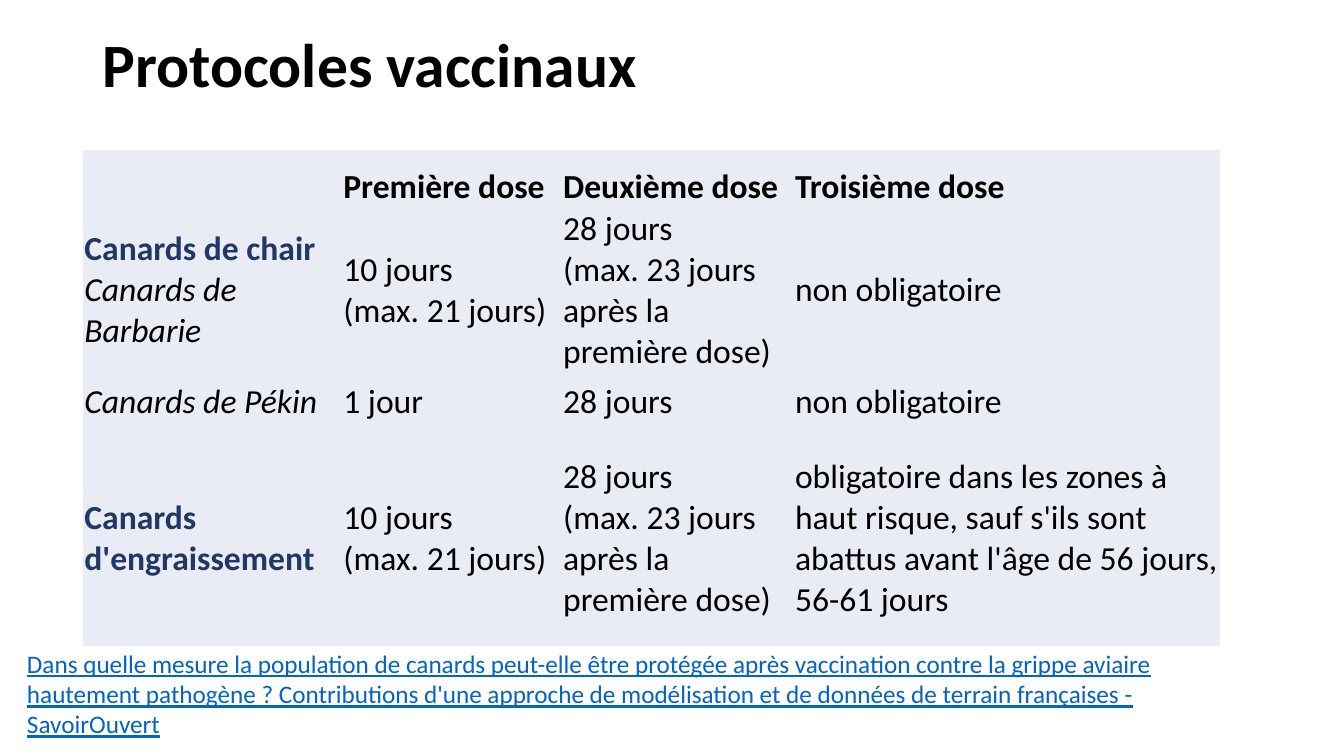
from pptx import Presentation
from pptx.dml.color import RGBColor
from pptx.enum.text import MSO_ANCHOR as Anchor, MSO_AUTO_SIZE as AutoSize, PP_ALIGN as Align
from pptx.oxml.ns import qn
from pptx.util import Pt

BLACK = RGBColor(0x00, 0x00, 0x00)
NAVY = RGBColor(0x20, 0x38, 0x64)
LINK_BLUE = RGBColor(0x05, 0x63, 0xC1)
PALE_BLUE = RGBColor(0xE9, 0xEB, 0xF5)
NO_STYLE_NO_GRID = "{2D5ABB26-0587-4C30-8999-92F81FD0307C}"

HEADING = dict(bold=True)
GROUP = dict(bold=True, color=NAVY)
BREED = dict(italic=True)
PLAIN = {}

# Each cell is a list of paragraphs; each paragraph is a list of (text, format).
FIRST_DOSE = [[("10 jours", PLAIN)], [("(max. 21 jours)", PLAIN)]]
SECOND_DOSE = [[("28 jours", PLAIN)], [("(max. 23 jours après la première dose)", PLAIN)]]
OPTIONAL = [[("non obligatoire", PLAIN)]]
PROTOCOLS = [
    [[]] + [[[(f"{rank} dose", HEADING)]] for rank in ("Première", "Deuxième", "Troisième")],
    [[[("Canards de chair ", GROUP), ("Canards de Barbarie", BREED)]],
     FIRST_DOSE, SECOND_DOSE, OPTIONAL],
    [[[("Canards de Pékin", BREED)]], [[("1 jour", PLAIN)]], [[("28 jours", PLAIN)]], OPTIONAL],
    [[[("Canards d'engraissement", GROUP)]], FIRST_DOSE, SECOND_DOSE,
     [[("obligatoire dans les zones à haut risque, sauf s'ils sont abattus "
        "avant l'âge de 56 jours, 56-61 jours", PLAIN)]]],
]
COLUMN_WIDTHS = (185, 157, 165.6, 304)
ROW_HEIGHTS = (41, 117, 41, 154)
SOURCE = ("Dans quelle mesure la population de canards peut-elle être protégée après vaccination "
          "contre la grippe aviaire hautement pathogène ? Contributions d'une approche de "
          "modélisation et de données de terrain françaises - SavoirOuvert")


def add_span(para, text, size=24, color=BLACK, bold=False, italic=False, underline=False):
    span = para.add_run()
    span.text = text
    font = span.font
    font.name, font.size, font.color.rgb = "Calibri", Pt(size), color
    font.bold, font.italic, font.underline = bold, italic, underline


class SlideBuilder:
    def __init__(self, page):
        self.page = page

    def title(self, text, left, top, width, height):
        box = self.page.shapes.title
        box.left, box.top, box.width, box.height = map(Pt, (left, top, width, height))
        frame = box.text_frame
        frame.auto_size = AutoSize.NONE
        frame.vertical_anchor = Anchor.MIDDLE
        para = frame.paragraphs[0]
        para.alignment = Align.LEFT
        para.line_spacing = 0.9
        add_span(para, text, size=44, bold=True)

    def table(self, rows, left, top):
        frame = self.page.shapes.add_table(
            len(rows), len(COLUMN_WIDTHS), Pt(left), Pt(top),
            Pt(sum(COLUMN_WIDTHS)), Pt(sum(ROW_HEIGHTS)))
        table = frame.table
        table.first_row = table.horz_banding = False
        table._tbl.tblPr.find(qn("a:tableStyleId")).text = NO_STYLE_NO_GRID
        for column, width in zip(table.columns, COLUMN_WIDTHS):
            column.width = Pt(width)
        for index, (row, height) in enumerate(zip(table.rows, ROW_HEIGHTS)):
            row.height = Pt(height)
            for cell, paragraphs in zip(row.cells, rows[index]):
                self.fill_cell(cell, paragraphs, Anchor.MIDDLE if index else Anchor.BOTTOM)

    def fill_cell(self, cell, paragraphs, anchor):
        cell.fill.solid()
        cell.fill.fore_color.rgb = PALE_BLUE
        cell.vertical_anchor = anchor
        cell.margin_left = cell.margin_top = cell.margin_right = Pt(0.7)
        cell.margin_bottom = 0
        frame = cell.text_frame
        for number, spans in enumerate(paragraphs):
            para = frame.add_paragraph() if number else frame.paragraphs[0]
            for text, style in spans:
                add_span(para, text, **style)

    def text(self, text, left, top, width, height, **style):
        box = self.page.shapes.add_textbox(Pt(left), Pt(top), Pt(width), Pt(height))
        frame = box.text_frame
        frame.word_wrap = True
        frame.auto_size = AutoSize.SHAPE_TO_FIT_TEXT
        add_span(frame.paragraphs[0], text, **style)


def main():
    deck = Presentation()
    deck.slide_width, deck.slide_height = Pt(960), Pt(540)
    title_only = deck.slide_layouts[5]
    builder = SlideBuilder(deck.slides.add_slide(title_only))
    builder.title("Protocoles vaccinaux", 66, -3.6, 828, 104.4)
    builder.table(PROTOCOLS, 59.6, 107.3)
    builder.text(SOURCE, 12.2, 459.4, 886.3, 51, size=18, color=LINK_BLUE, underline=True)
    deck.save("out.pptx")


if __name__ == "__main__":
    main()
